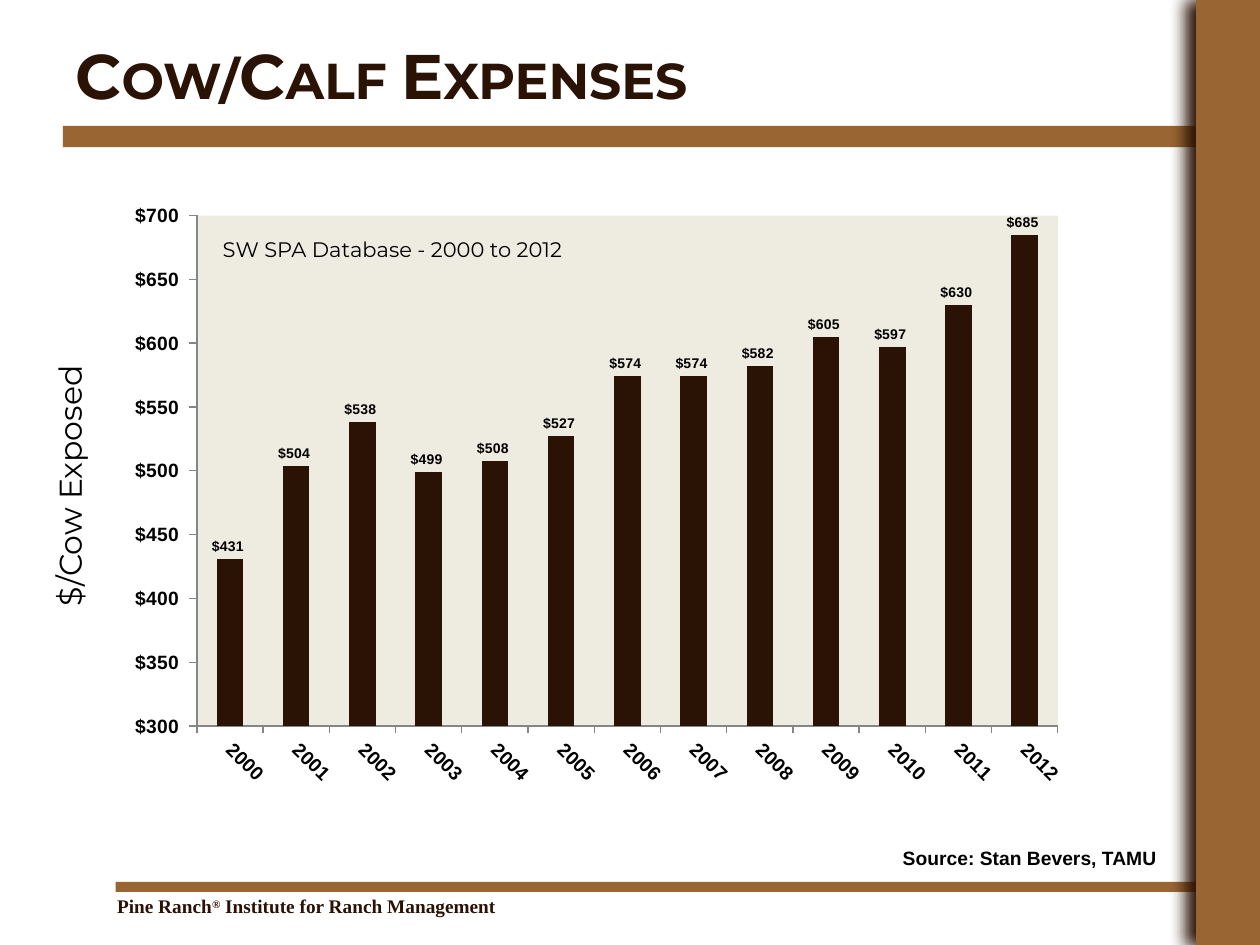
from lxml import etree
from pptx import Presentation
from pptx.chart.data import CategoryChartData
from pptx.dml.color import RGBColor
from pptx.enum.chart import XL_CHART_TYPE, XL_LABEL_POSITION, XL_TICK_MARK
from pptx.enum.shapes import MSO_SHAPE
from pptx.enum.text import MSO_ANCHOR, MSO_AUTO_SIZE, PP_ALIGN
from pptx.oxml import parse_xml
from pptx.oxml.ns import nsdecls, qn
from pptx.util import Cm, Pt

COLUMN_CLUSTERED = XL_CHART_TYPE.COLUMN_CLUSTERED
OUTSIDE_END = XL_LABEL_POSITION.OUTSIDE_END
TICK_OUTSIDE = XL_TICK_MARK.OUTSIDE
RECTANGLE = MSO_SHAPE.RECTANGLE
MIDDLE = MSO_ANCHOR.MIDDLE
NO_FIT = MSO_AUTO_SIZE.NONE
FIT_SHAPE = MSO_AUTO_SIZE.SHAPE_TO_FIT_TEXT
LEFT = PP_ALIGN.LEFT
RIGHT = PP_ALIGN.RIGHT

BROWN, DARK, BLACK, GREY, CREAM = "996633", "2A1204", "000000", "868686", "EEECE1"
DOLLARS = '"$"#,##0_);[Red]\\("$"#,##0\\)'


def color(value):
    return RGBColor.from_string(value)


def set_font(font, name, size, value, bold=False):
    font.name, font.size, font.bold = name, Pt(size), bold
    font.color.rgb = color(value)


presentation = Presentation()
presentation.slide_width, presentation.slide_height = Cm(25.4), Cm(19.05)
slide = presentation.slides.add_slide(presentation.slide_layouts[5])

# Title
title = slide.shapes.title
title.left, title.top, title.width, title.height = Cm(1.27), Cm(0.64), Cm(22.86), Cm(1.7)
title.text_frame.text = "Cow/Calf Expenses"
title.text_frame.vertical_anchor = MIDDLE
title.text_frame.auto_size = NO_FIT
paragraph = title.text_frame.paragraphs[0]
paragraph.alignment = LEFT
set_font(paragraph.font, "Montserrat", 36, DARK, True)
paragraph.runs[0].font._element.set("cap", "small")

# Title rule, footer rule and side band
for left, top, width, height in [
    (1.27, 2.54, 22.86, 0.43),
    (2.33, 17.78, 21.8, 0.2),
    (24.13, 0, 1.27, 19.05),
]:
    band = slide.shapes.add_shape(RECTANGLE, Cm(left), Cm(top), Cm(width), Cm(height))
    band.shadow.inherit = False
    band.fill.solid()
    band.fill.fore_color.rgb = color(BROWN)
    band.line.fill.background()

side_band = band
side_band.line.color.rgb = color(BROWN)
side_band.line.width = Pt(0.75)
shadow = etree.SubElement(
    side_band._element.spPr.find(qn("a:effectLst")), qn("a:outerShdw"),
    blurRad=str(Pt(9)), dist=str(Pt(7)), dir="10800000", algn="r", rotWithShape="0")
etree.SubElement(shadow, qn("a:srgbClr"), val=DARK)

# Expense chart
chart_data = CategoryChartData()
chart_data.categories = [str(year) for year in range(2000, 2013)]
chart_data.add_series(
    "Series 1", [431, 504, 538, 499, 508, 527, 574, 574, 582, 605, 597, 630, 685])
chart = slide.shapes.add_chart(
    COLUMN_CLUSTERED, Cm(2.36), Cm(3.61), Cm(19.86), Cm(12.9), chart_data).chart
chart.has_legend = False
chart.has_title = False
set_font(chart.font, "Arial", 18, BLACK)

for axis in (chart.category_axis, chart.value_axis):
    axis.has_major_gridlines = False
    axis.major_tick_mark = TICK_OUTSIDE
    axis.format.line.color.rgb = color(GREY)
    axis.format.line.width = Pt(0.75)
    set_font(axis.tick_labels.font, "Arial", 11, BLACK, True)
label_body = chart.category_axis._element.find(qn("c:txPr")).find(qn("a:bodyPr"))
label_body.set("rot", "2700000")
label_body.set("vert", "horz")
value_axis = chart.value_axis
value_axis.minimum_scale, value_axis.maximum_scale, value_axis.major_unit = 300, 700, 50
value_axis.tick_labels.number_format = DOLLARS
value_axis.tick_labels.number_format_is_linked = False

plot = chart.plots[0]
plot.gap_width = 150
plot.vary_by_categories = False
series = plot.series[0]
series.format.fill.solid()
series.format.fill.fore_color.rgb = color(DARK)
labels = series.data_labels
labels.show_value = True
labels.position = OUTSIDE_END
labels.number_format = DOLLARS
labels.number_format_is_linked = False
set_font(labels.font, "Arial", 8, BLACK, True)

# Plot area place and fill
plot_area = chart._chartSpace.chart.plotArea
for old_layout in plot_area.findall(qn("c:layout")):
    plot_area.remove(old_layout)
layout = etree.Element(qn("c:layout"))
manual_layout = etree.SubElement(layout, qn("c:manualLayout"))
for tag, value in [
    ("layoutTarget", "inner"), ("xMode", "edge"), ("yMode", "edge"),
    ("x", "0.081"), ("y", "0.057"), ("w", "0.874"), ("h", "0.798"),
]:
    etree.SubElement(manual_layout, qn(f"c:{tag}"), val=value)
plot_area.insert(0, layout)
plot_area.append(parse_xml(
    f'<c:spPr {nsdecls("c", "a")}><a:solidFill><a:srgbClr val="{CREAM}"/>'
    "</a:solidFill></c:spPr>"))

# Footer, source, chart note and axis caption
for left, top, width, height, runs, name, size, value, bold, wrap, align, rotation in [
    (2.11, 17.91, 8.69, 0.74, ["Pine Ranch", "®", " Institute for Ranch Management"],
     "Times New Roman", 11, DARK, True, True, LEFT, 0),
    (17.78, 16.94, 5.79, 0.74, ["Source: Stan Bevers, TAMU"],
     "Arial", 11, BLACK, True, False, RIGHT, 0),
    (4.24, 4.65, 12.7, 0.76, ["SW SPA Database - 2000 to 2012"],
     "Montserrat", 12, BLACK, False, True, LEFT, 0),
    (-1.52, 9.04, 5.84, 1.02, ["$/Cow Exposed"],
     "Montserrat", 18, BLACK, False, False, LEFT, 270),
]:
    box = slide.shapes.add_textbox(Cm(left), Cm(top), Cm(width), Cm(height))
    box.rotation = rotation
    box.text_frame.word_wrap = wrap
    box.text_frame.auto_size = FIT_SHAPE
    paragraph = box.text_frame.paragraphs[0]
    paragraph.alignment = align
    set_font(paragraph.font, name, size, value, bold)
    for text in runs:
        run = paragraph.add_run()
        run.text = text
        if text == "®":
            run.font._element.set("baseline", "30000")

presentation.save("out.pptx")
